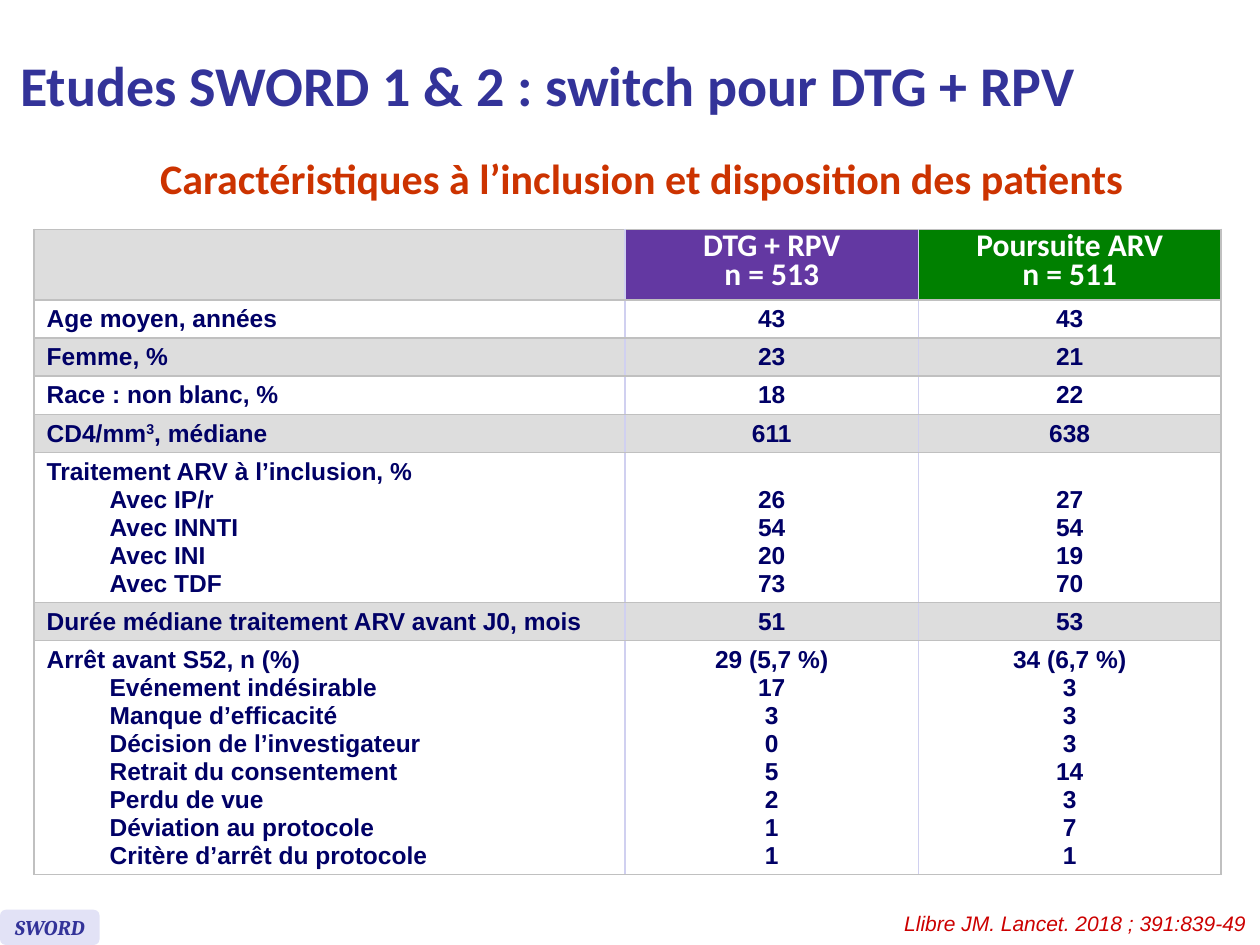
import pptx
import pptx.util
import pptx.dml.color
import pptx.enum.shapes
import pptx.enum.text
import pptx.oxml
import pptx.oxml.ns

Inches, Pt = pptx.util.Inches, pptx.util.Pt
ALIGN, ANCHOR = pptx.enum.text.PP_ALIGN, pptx.enum.text.MSO_ANCHOR

COLORS = {
    "title": "333399", "subtitle": "CC3300", "citation": "CC0000", "badge": "E2E2F6",
    "text": "000066", "white": "FFFFFF", "band": "DDDDDD",
    "dual": "6338A2", "continued": "008000", "grid": "C0C0C0", "divider": "D0D0F0",
}

TITLE = "Etudes SWORD 1 & 2 : switch pour DTG + RPV"
SUBTITLE = "Caractéristiques à l’inclusion et disposition des patients"
CITATION = "Llibre JM. Lancet. 2018 ; 391:839-49"
STUDY = "SWORD"

HEADERS = [([], "band"),
           (["DTG + RPV", "n = 513"], "dual"),
           (["Poursuite ARV", "n = 511"], "continued")]
# Each row: labels (heading, then indented items), DTG + RPV values, continued ARV values
ROWS = [
    (["Age moyen, années"], ["43"], ["43"]),
    (["Femme, %"], ["23"], ["21"]),
    (["Race : non blanc, %"], ["18"], ["22"]),
    (["CD4/mm^3^, médiane"], ["611"], ["638"]),
    (["Traitement ARV à l’inclusion, %", "Avec IP/r", "Avec INNTI", "Avec INI", "Avec TDF"],
     ["26", "54", "20", "73"], ["27", "54", "19", "70"]),
    (["Durée médiane traitement ARV avant J0, mois"], ["51"], ["53"]),
    (["Arrêt avant S52, n (%)", "Evénement indésirable", "Manque d’efficacité",
      "Décision de l’investigateur", "Retrait du consentement", "Perdu de vue",
      "Déviation au protocole", "Critère d’arrêt du protocole"],
     ["29 (5,7 %)", "17", "3", "0", "5", "2", "1", "1"],
     ["34 (6,7 %)", "3", "3", "3", "14", "3", "7", "1"]),
]
COLUMN_WIDTHS = [4.69, 2.33, 2.4]
HEADER_HEIGHT = 0.56
LINE_POINTS = 16
CELL_MARGIN = 0.04


def rgb(name):
    return pptx.dml.color.RGBColor.from_string(COLORS[name])


def style(para, font, size, color, bold=False, italic=False, align=ALIGN.LEFT):
    para.alignment = align
    para.font.name, para.font.size = font, Pt(size)
    para.font.bold, para.font.italic = bold, italic
    para.font.color.rgb = rgb(color)


def write(para, text):
    """Add text to a paragraph; parts between carets become superscript."""
    for index, part in enumerate(text.split("^")):
        run = para.add_run()
        run.text = part
        if index % 2:
            run._r.get_or_add_rPr().set("baseline", "30000")


def set_borders(cell, column):
    last = len(COLUMN_WIDTHS) - 1
    sides = {"L": "divider" if column else "grid",
             "R": "divider" if column < last else "grid",
             "T": "grid", "B": "grid"}
    for side, color in sides.items():
        cell._tc.get_or_add_tcPr().append(pptx.oxml.parse_xml(
            f'<a:ln{side} {pptx.oxml.ns.nsdecls("a")} w="12700"><a:solidFill>'
            f'<a:srgbClr val="{COLORS[color]}"/></a:solidFill></a:ln{side}>'))


def fill_cell(cell, column, lines, fill, margin, line_points, font, size, color):
    set_borders(cell, column)
    cell.fill.solid()
    cell.fill.fore_color.rgb = rgb(fill)
    cell.vertical_anchor = ANCHOR.MIDDLE
    cell.margin_top = cell.margin_bottom = Inches(margin)
    for index, line in enumerate(lines):
        para = cell.text_frame.paragraphs[0] if index == 0 else cell.text_frame.add_paragraph()
        if column == 0 and index:
            para._p.get_or_add_pPr().set("marL", str(Inches(0.5)))
        para.line_spacing = Pt(line_points)
        write(para, line)
        style(para, font, size, color, bold=True, align=ALIGN.CENTER if column else ALIGN.LEFT)


def add_patient_table(slide):
    heights = [HEADER_HEIGHT] + [len(labels) * LINE_POINTS / 72 + 2 * CELL_MARGIN
                                 for labels, *_ in ROWS]
    table = slide.shapes.add_table(
        len(heights), len(COLUMN_WIDTHS), Inches(0.27), Inches(1.82),
        Inches(sum(COLUMN_WIDTHS)), Inches(sum(heights))).table
    table.first_row = table.horz_banding = False
    for column, width in zip(table.columns, COLUMN_WIDTHS):
        column.width = Inches(width)
    for row, height in zip(table.rows, heights):
        row.height = Inches(height)

    for column, (lines, fill) in enumerate(HEADERS):
        fill_cell(table.cell(0, column), column, lines, fill, 0.05, 16.6, "Calibri", 18, "white")
    for index, row in enumerate(ROWS, start=1):
        fill = "white" if index % 2 else "band"
        for column, lines in enumerate(row):
            cell = table.cell(index, column)
            fill_cell(cell, column, lines, fill, CELL_MARGIN, LINE_POINTS, "Arial", 14, "text")
            if len(lines) < len(row[0]):  # values line up with the indented items
                cell.vertical_anchor = ANCHOR.BOTTOM


def add_text(slide, text, left, top, width, height, wrap):
    box = slide.shapes.add_textbox(Inches(left), Inches(top), Inches(width), Inches(height))
    box.text_frame.word_wrap = wrap
    para = box.text_frame.paragraphs[0]
    write(para, text)
    return para


def add_badge(slide):
    badge = slide.shapes.add_shape(
        pptx.enum.shapes.MSO_SHAPE.ROUNDED_RECTANGLE,
        Inches(0), Inches(7.22), Inches(0.79), Inches(0.28))
    badge.shadow.inherit = False
    badge.fill.solid()
    badge.fill.fore_color.rgb = rgb("badge")
    badge.line.fill.background()
    badge.text_frame.word_wrap = False
    badge.text_frame.vertical_anchor = ANCHOR.MIDDLE
    para = badge.text_frame.paragraphs[0]
    write(para, STUDY)
    style(para, "Cambria", 12, "title", bold=True, italic=True, align=ALIGN.CENTER)


def main():
    deck = pptx.Presentation()
    deck.slide_width, deck.slide_height = Inches(10), Inches(7.5)
    slide = deck.slides.add_slide(deck.slide_layouts.get_by_name("Title Only"))

    title = slide.shapes.title
    title.left, title.top = Inches(0.06), Inches(0.06)
    title.width, title.height = Inches(8.96), Inches(1.21)
    title.text_frame.vertical_anchor = ANCHOR.MIDDLE
    title.text_frame.text = TITLE
    style(title.text_frame.paragraphs[0], "Calibri", 32, "title", bold=True)

    add_patient_table(slide)
    subtitle = add_text(slide, SUBTITLE, 0.86, 1.35, 8.47, 0.35, wrap=True)
    subtitle.line_spacing = Pt(15.2)
    style(subtitle, "Calibri", 24, "subtitle", bold=True, align=ALIGN.CENTER)
    add_badge(slide)
    citation = add_text(slide, CITATION, 7.06, 7.18, 2.93, 0.3, wrap=False)
    style(citation, "Arial", 12, "citation", italic=True, align=ALIGN.RIGHT)

    deck.save("out.pptx")


if __name__ == "__main__":
    main()
